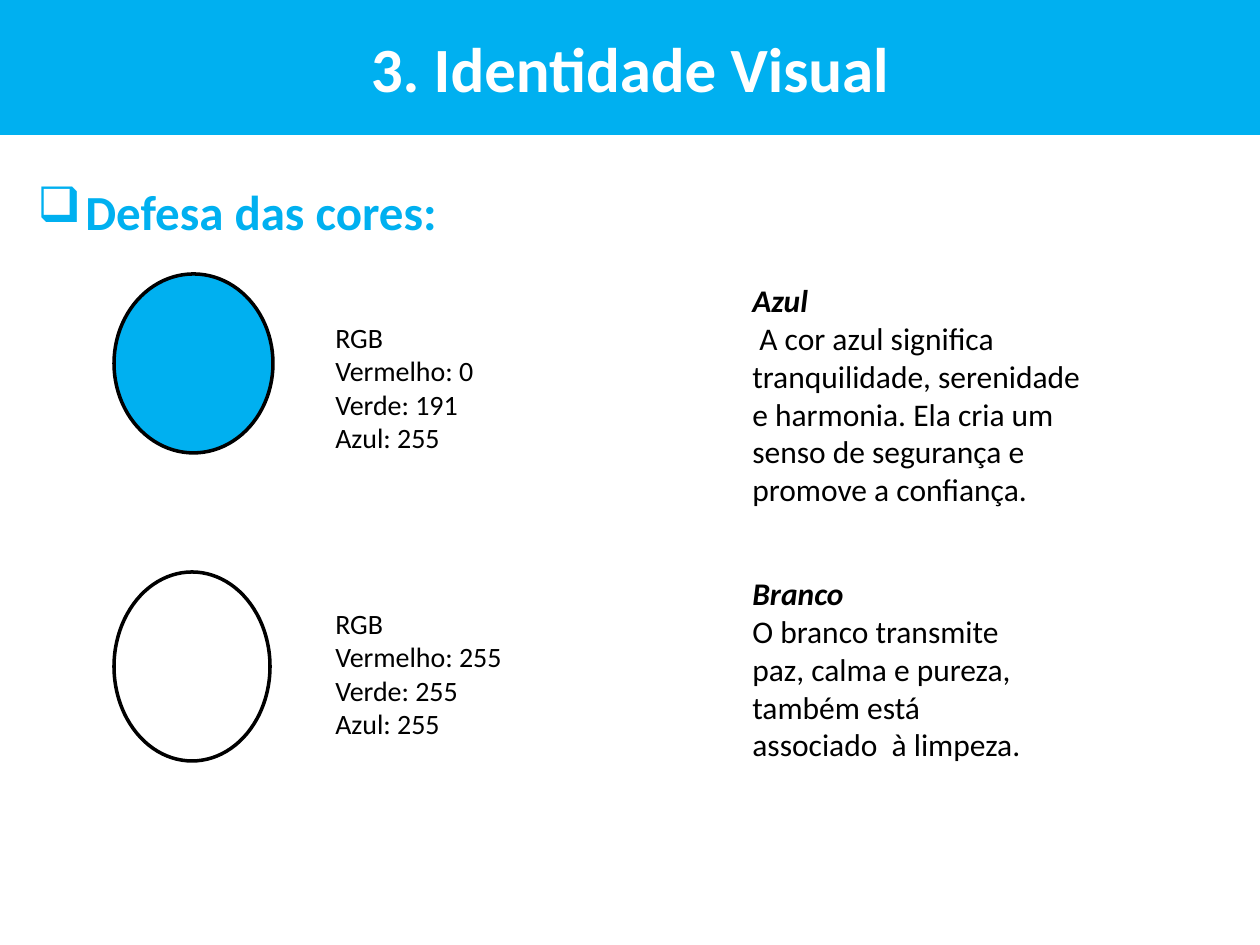
from dataclasses import dataclass

from lxml.etree import SubElement
from pptx import Presentation
from pptx.dml.color import RGBColor
from pptx.enum.shapes import MSO_SHAPE as Shape
from pptx.enum.text import MSO_ANCHOR as Anchor, PP_ALIGN as Align
from pptx.oxml.ns import qn
from pptx.util import Emu, Pt

PX_PER_INCH = 126
BLUE = RGBColor(0x00, 0xB0, 0xF0)
WHITE = RGBColor(0xFF, 0xFF, 0xFF)
BLACK = RGBColor(0x00, 0x00, 0x00)

HEADING_FORMAT = {"size": Pt(28), "bold": True}
VALUE_FORMAT = {"size": Pt(16)}
BODY_FORMAT = {"size": Pt(18), "bold": False, "italic": False}
NAME_FORMAT = {"size": Pt(18), "bold": True, "italic": True}


def px(length: int) -> Emu:
    return Emu(round(length * 914400 / PX_PER_INCH))


@dataclass(frozen=True)
class Box:
    left: int
    top: int
    width: int
    height: int

    def emu(self) -> list[Emu]:
        return [px(n) for n in (self.left, self.top, self.width, self.height)]


@dataclass(frozen=True)
class ColourEntry:
    name: str
    fill: RGBColor
    rgb: tuple[int, int, int]
    meaning: list[str]
    swatch_box: Box
    values_box: Box
    meaning_box: Box


ENTRIES = [
    ColourEntry(
        "Azul", BLUE, (0, 191, 255),
        [" A cor azul significa",
         "tranquilidade, serenidade e harmonia. Ela cria um senso de "
         "segurança e promove a confiança."],
        Box(114, 274, 159, 179), Box(323, 314, 277, 149), Box(740, 275, 367, 318)),
    ColourEntry(
        "Branco", WHITE, (255, 255, 255),
        ["O branco transmite paz, calma e pureza, também está "
         "associado  à limpeza."],
        Box(114, 572, 156, 189), Box(323, 600, 287, 186), Box(740, 568, 307, 242)),
]


def write(paragraph, text: str, formats: dict, colour: RGBColor = BLACK) -> None:
    run = paragraph.add_run()
    run.text = text
    run.font.name = "Calibri"
    run.font.color.rgb = colour
    for attribute, value in formats.items():
        setattr(run.font, attribute, value)


def add_text(slide, box: Box, lines: list[tuple[str, dict]],
             colour: RGBColor = BLACK):
    frame = slide.shapes.add_textbox(*box.emu()).text_frame
    frame.word_wrap = True
    for index, (text, formats) in enumerate(lines):
        paragraph = frame.add_paragraph() if index else frame.paragraphs[0]
        write(paragraph, text, formats, colour)
    return frame


def add_title(slide, text: str) -> None:
    title = slide.shapes.title
    title.left, title.top, title.width, title.height = Box(0, -1, 1260, 136).emu()
    title.fill.solid()
    title.fill.fore_color.rgb = BLUE
    title.text_frame.vertical_anchor = Anchor.MIDDLE
    paragraph = title.text_frame.paragraphs[0]
    paragraph.alignment = Align.CENTER
    write(paragraph, text, {"size": Pt(36), "bold": True}, WHITE)


def add_heading(slide, text: str) -> None:
    frame = add_text(slide, Box(25, 175, 1134, 624), [(text, HEADING_FORMAT)], BLUE)
    paragraph = frame.paragraphs[0]
    paragraph.space_before = Pt(5.6)
    # Hanging square bullet
    properties = paragraph._p.get_or_add_pPr()
    indent = px(48)
    properties.set("marL", str(indent))
    properties.set("indent", str(-indent))
    SubElement(properties, qn("a:buChar")).set("char", "❑")


def add_swatch(slide, box: Box, fill: RGBColor) -> None:
    swatch = slide.shapes.add_shape(Shape.OVAL, *box.emu())
    swatch.shadow.inherit = False
    swatch.fill.solid()
    swatch.fill.fore_color.rgb = fill
    swatch.line.color.rgb = BLACK
    swatch.line.width = Pt(2)


def add_entry(slide, entry: ColourEntry) -> None:
    add_swatch(slide, entry.swatch_box, entry.fill)
    channels = zip(("Vermelho", "Verde", "Azul"), entry.rgb)
    values = ["RGB"] + [f"{channel}: {value}" for channel, value in channels]
    add_text(slide, entry.values_box, [(line, VALUE_FORMAT) for line in values])
    add_text(slide, entry.meaning_box,
             [(entry.name, NAME_FORMAT)]
             + [(line, BODY_FORMAT) for line in entry.meaning])


def main() -> None:
    presentation = Presentation()
    presentation.slide_width, presentation.slide_height = px(1260), px(945)
    slide = presentation.slides.add_slide(presentation.slide_layouts[5])

    # Title band and section heading
    add_title(slide, "3. Identidade Visual")
    add_heading(slide, "Defesa das cores:")

    # Colours with their values and meanings
    for entry in ENTRIES:
        add_entry(slide, entry)

    presentation.save("out.pptx")


if __name__ == "__main__":
    main()
